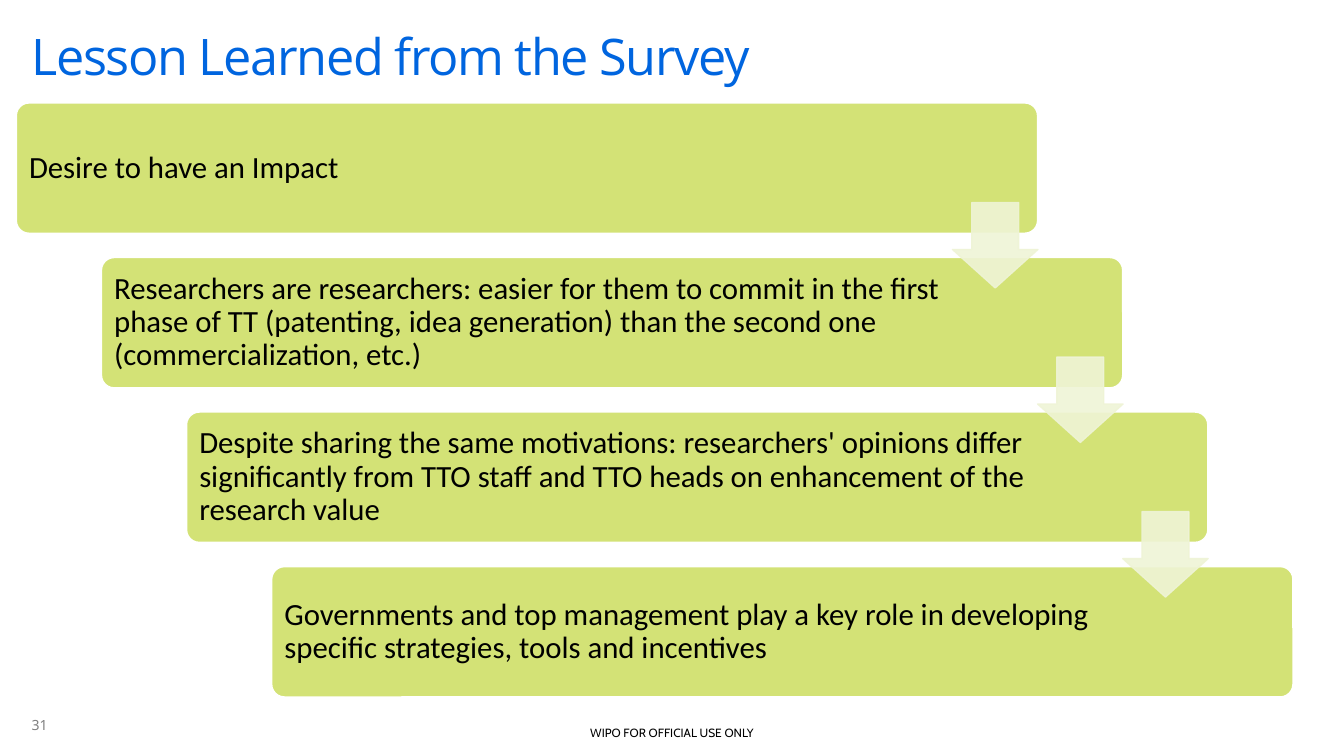
from dataclasses import dataclass

from lxml.etree import SubElement
from pptx import Presentation
from pptx.dml.color import RGBColor
from pptx.enum.shapes import MSO_SHAPE
from pptx.enum.text import MSO_ANCHOR, PP_ALIGN
from pptx.oxml.ns import qn
from pptx.shapes.autoshape import Shape
from pptx.slide import Slide
from pptx.text.text import TextFrame
from pptx.util import Pt

COLORS = {
    "title": "0065DF",
    "card": "D3E276",
    "card_line": "FFFFFF",
    "arrow": "EFF4D6",
    "text": "000000",
    "page_number": "808080",
}

CARD_LEFT, CARD_TOP = 11.4, 73.3
CARD_WIDTH, CARD_HEIGHT = 730, 93.6
STEP_X, STEP_Y = 60.8, 110.4
CARD_INSETS = (6.6, 6.6, 128, 6.6)
ARROW_LEFT, ARROW_TOP, ARROW_SIZE = 680.4, 144.7, 61
ARROW_OPACITY = 90

LESSONS = [
    "Desire to have an Impact",
    "Researchers are researchers: easier for them to commit in the first phase "
    "of TT (patenting, idea generation) than the second one (commercialization, etc.)",
    "Despite sharing the same motivations: researchers' opinions differ significantly "
    "from TTO staff and TTO heads on enhancement of the research value",
    "Governments and top management play a key role in developing specific "
    "strategies, tools and incentives",
]


@dataclass(frozen=True)
class TextStyle:
    font: str
    size: float
    color: str
    anchor: MSO_ANCHOR = MSO_ANCHOR.TOP
    align: PP_ALIGN = PP_ALIGN.LEFT
    line_spacing: float = 1.0
    tracking: float = 0
    insets: tuple[float, float, float, float] = (0, 0, 0, 0)


@dataclass(frozen=True)
class Label:
    text: str
    left: float
    top: float
    width: float
    height: float
    style: TextStyle


CARD_STYLE = TextStyle("Calibri", 22, "text", MSO_ANCHOR.MIDDLE,
                       line_spacing=0.9, insets=CARD_INSETS)

LABELS = [
    Label("WIPO FOR OFFICIAL USE ONLY", 0, 514.8, 960, 17.3,
          TextStyle("Cabin", 8.5, "text", align=PP_ALIGN.CENTER,
                    insets=(7.2, 3.6, 7.2, 3.6))),
    Label("31", 22.6, 494.7, 87.1, 28.8,
          TextStyle("Noto Sans", 10, "page_number", MSO_ANCHOR.BOTTOM)),
    Label("Lesson Learned from the Survey", 22.4, 22.9, 901.4, 101.5,
          TextStyle("Open Sans", 36, "title", line_spacing=0.9, tracking=-0.95)),
]


def rgb(name: str) -> RGBColor:
    return RGBColor.from_string(COLORS[name])


def write_text(frame: TextFrame, text: str, style: TextStyle) -> None:
    frame.word_wrap = True
    frame.vertical_anchor = style.anchor
    (frame.margin_left, frame.margin_top,
     frame.margin_right, frame.margin_bottom) = map(Pt, style.insets)
    paragraph = frame.paragraphs[0]
    paragraph.alignment = style.align
    paragraph.line_spacing = style.line_spacing
    run = paragraph.add_run()
    run.text = text
    run.font.name = style.font
    run.font.size = Pt(style.size)
    run.font.color.rgb = rgb(style.color)
    if style.tracking:
        run.font._element.set("spc", str(round(style.tracking * 100)))


def add_label(slide: Slide, label: Label) -> None:
    box = slide.shapes.add_textbox(Pt(label.left), Pt(label.top),
                                   Pt(label.width), Pt(label.height))
    write_text(box.text_frame, label.text, label.style)


def add_filled_shape(slide: Slide, kind: MSO_SHAPE, left: float, top: float,
                     width: float, height: float, adjustments: list[float],
                     fill: str, line: str, line_width: float) -> Shape:
    shape = slide.shapes.add_shape(kind, Pt(left), Pt(top), Pt(width), Pt(height))
    for index, value in enumerate(adjustments):
        shape.adjustments[index] = value
    shape.shadow.inherit = False
    shape.fill.solid()
    shape.fill.fore_color.rgb = rgb(fill)
    shape.line.color.rgb = rgb(line)
    shape.line.width = Pt(line_width)
    return shape


def add_card(slide: Slide, step: int, text: str) -> None:
    card = add_filled_shape(
        slide, MSO_SHAPE.ROUNDED_RECTANGLE,
        CARD_LEFT + step * STEP_X, CARD_TOP + step * STEP_Y,
        CARD_WIDTH, CARD_HEIGHT, [0.1], "card", "card_line", 1.5)
    write_text(card.text_frame, text, CARD_STYLE)


def add_arrow(slide: Slide, step: int) -> None:
    """Add the translucent arrow from one card to the next."""
    arrow = add_filled_shape(
        slide, MSO_SHAPE.DOWN_ARROW,
        ARROW_LEFT + step * STEP_X, ARROW_TOP + step * STEP_Y,
        ARROW_SIZE, ARROW_SIZE, [0.55, 0.45], "arrow", "arrow", 1)
    for color in arrow._element.spPr.iter(qn("a:srgbClr")):
        SubElement(color, qn("a:alpha"), val=str(ARROW_OPACITY * 1000))


def main() -> None:
    presentation = Presentation()
    presentation.slide_width, presentation.slide_height = Pt(960), Pt(540)
    slide = presentation.slides.add_slide(presentation.slide_layouts[6])
    for label in LABELS:
        add_label(slide, label)
    for step, text in enumerate(LESSONS):
        add_card(slide, step, text)
    for step in range(len(LESSONS) - 1):
        add_arrow(slide, step)
    presentation.save("out.pptx")


if __name__ == "__main__":
    main()
